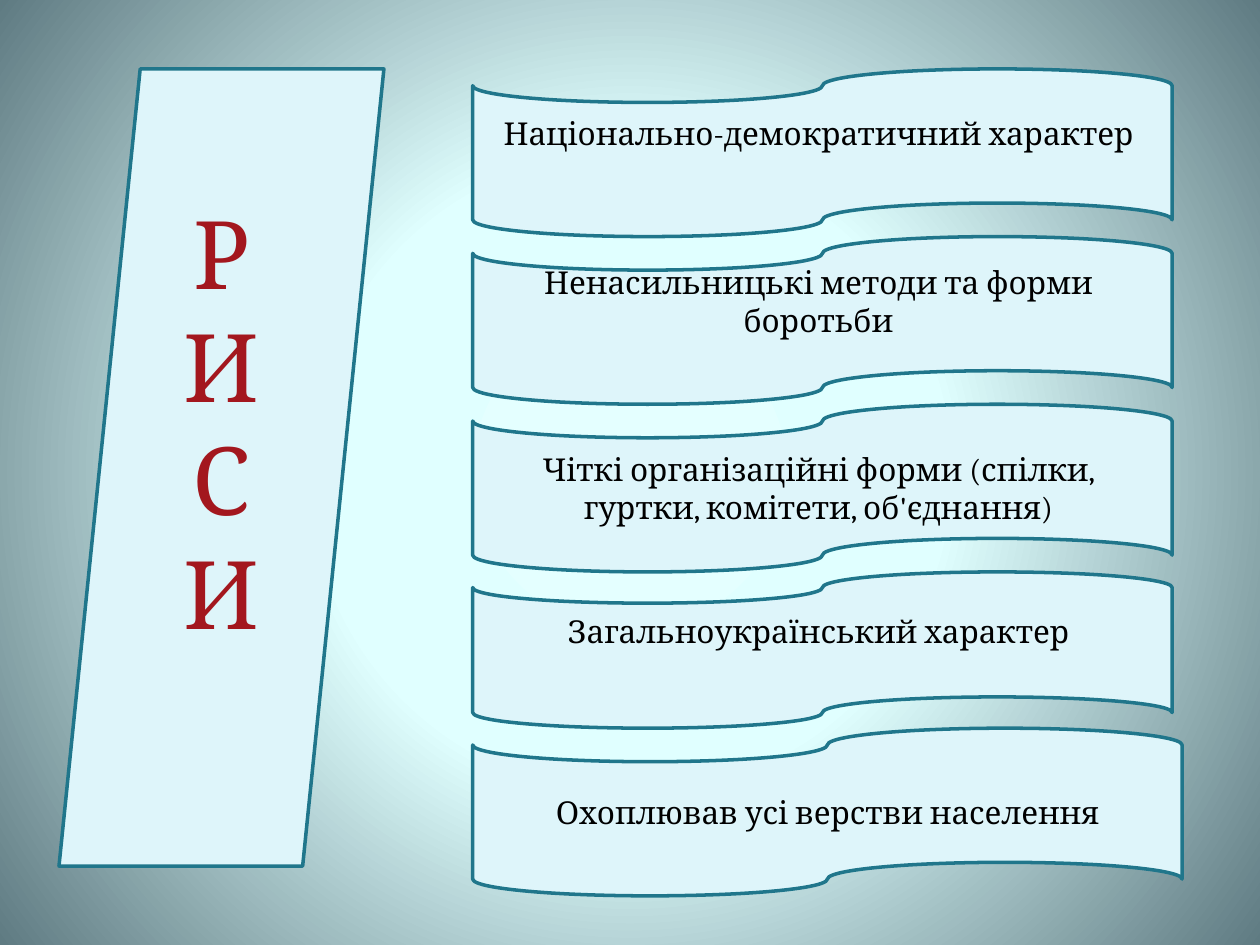
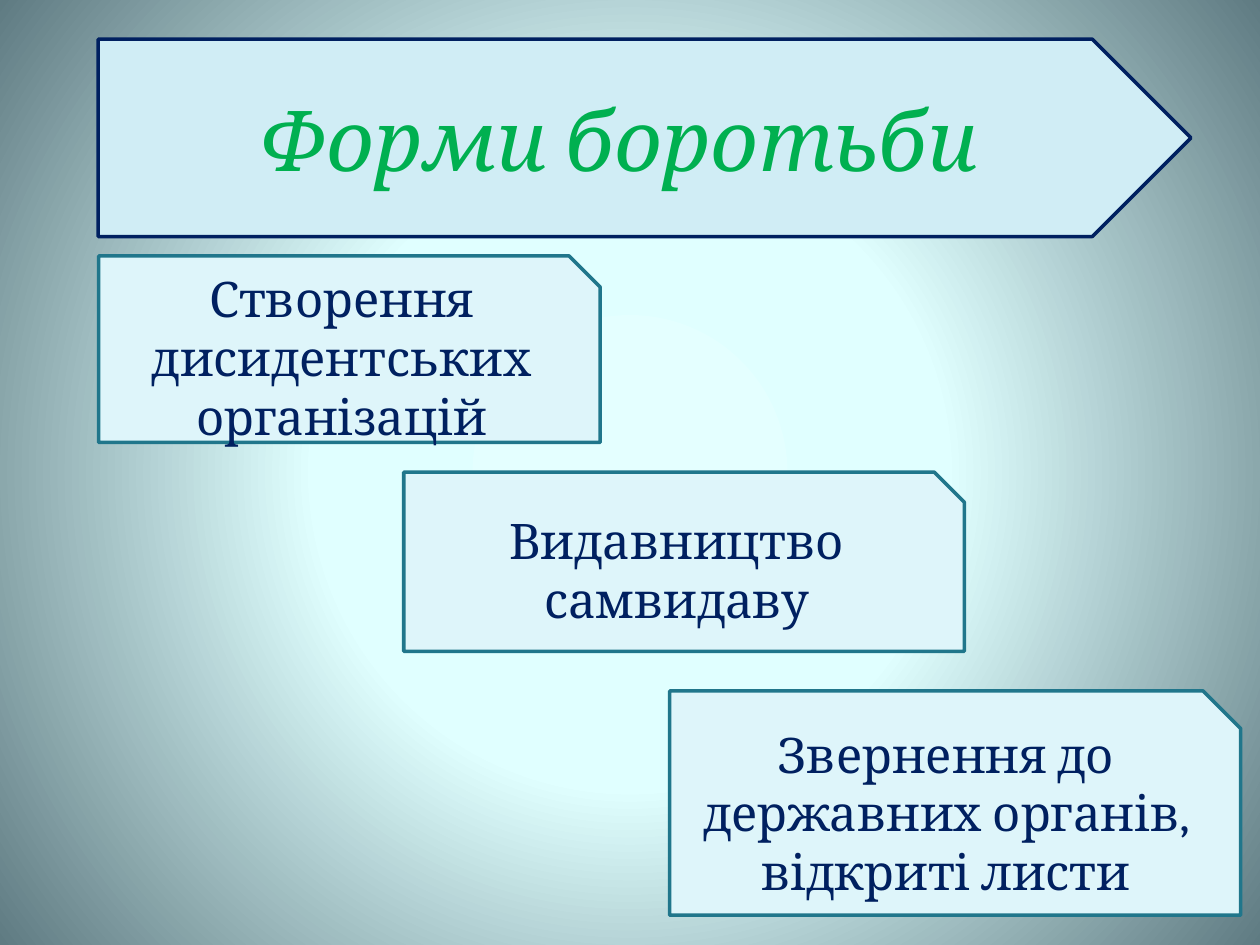
from pptx import Presentation
from pptx import util as u
from pptx.dml.color import RGBColor
from pptx.enum import shapes, text
from pptx.oxml import parse_xml
from pptx.oxml.ns import nsdecls, qn

# Content
FEATURES_TITLE = ["Р", "И", "С", "И"]
# text, width, height, right margin, lift of the text (cm)
FEATURES = [
    ("Національно-демократичний характер", 14.1, 3.38, 0.41, 0.78),
    ("Ненасильницькі методи та форми боротьби", 14.1, 3.38, 0.41, 0.78),
    ("Чіткі організаційні форми (спілки, гуртки, комітети, об'єднання)",
     14.1, 3.38, 0.41, 0),
    ("Загальноукраїнський характер", 14.1, 3.15, 0.41, 0.78),
    ("Охоплював усі верстви населення", 14.3, 3.38, 0.25, 0),
]
FORMS_TITLE = ["Форми боротьби"]
FORMS = [
    ("Створення дисидентських організацій", (1.99, 5.16, 10.11, 3.76)),
    ("Видавництво самвидаву", (8.14, 9.52, 11.3, 3.61)),
    ("Звернення до державних органів, відкриті листи", (13.5, 13.93, 11.51, 4.52)),
]

# Shared look
FONT = "Cambria"
PALE, TEAL, NAVY = "DEF5FA", "20768B", "002060"
BACKGROUND = [(0, "E4FFFF"), (40, "E0FFFF"), (100, "5F7B82")]
KIND = shapes.MSO_SHAPE


def color(hex_code):
    return RGBColor.from_string(hex_code)


def set_background(master):
    """Give every slide a radial gradient."""
    master.background.fill.gradient()
    stops = "".join(
        f'<a:gs pos="{position * 1000}"><a:srgbClr val="{code}"/></a:gs>'
        for position, code in BACKGROUND)
    radial = parse_xml(
        f'<a:gradFill {nsdecls("a")} rotWithShape="1"><a:gsLst>{stops}</a:gsLst>'
        '<a:path path="circle">'
        '<a:fillToRect l="50000" t="50000" r="50000" b="50000"/>'
        '</a:path></a:gradFill>')
    plain = next(master.element.iter(qn("a:gradFill")))
    plain.getparent().replace(plain, radial)


def write(shape, lines, size, hex_code, italic=False, right=0.25, lift=0):
    """Centre lines in a shape; lift adds room below them (cm)."""
    frame = shape.text_frame
    frame.text = "\n".join(lines)
    frame.word_wrap = True
    frame.auto_size = text.MSO_AUTO_SIZE.NONE
    frame.vertical_anchor = text.MSO_ANCHOR.MIDDLE
    frame.margin_right = u.Cm(right)
    frame.margin_bottom = u.Cm(0.13 + lift)
    for para in frame.paragraphs:
        para.alignment = text.PP_ALIGN.CENTER
        for span in para.runs:
            span.font.name = FONT
            span.font.size = u.Pt(size)
            span.font.italic = italic
            span.font.color.rgb = color(hex_code)


def add_panel(page, kind, box, fill=PALE, line=TEAL, adjustment=None):
    panel = page.shapes.add_shape(kind, *map(u.Cm, box))
    panel.shadow.inherit = False
    panel.fill.solid()
    panel.fill.fore_color.rgb = color(fill)
    panel.line.color.rgb = color(line)
    panel.line.width = u.Pt(2)
    if adjustment is not None:
        panel.adjustments[0] = adjustment
    return panel


def place_title(page, panel, box, lines, size, hex_code, **style):
    """Lay the title placeholder over its panel."""
    title = page.shapes.title
    title.left, title.top, title.width, title.height = map(u.Cm, box)
    write(title, lines, size, hex_code, **style)
    panel.element.addnext(title.element)


def build_features(page):
    # Slanted panel with the vertical title
    box = (1.19, 1.39, 6.55, 16.07)
    panel = add_panel(page, KIND.PARALLELOGRAM, box, adjustment=0.25)
    place_title(page, panel, box, FEATURES_TITLE, 54, "A3171E", lift=1.86)

    # Stack of waves, each starting where the last one ends
    top = 1.39
    for wording, width, height, right, lift in FEATURES:
        wave = add_panel(page, KIND.FLOWCHART_PUNCHED_TAPE, (9.53, top, width, height))
        write(wave, [wording], 18, "000000", right=right, lift=lift)
        top += height


def build_forms(page):
    # Arrow with the title, which keeps clear of the tip
    left, top, width, height = box = (1.98, 0.79, 22.03, 3.98)
    arrow = add_panel(page, KIND.PENTAGON, box, "D0EDF5", NAVY, 0.5)
    place_title(page, arrow, (left, top, width - height / 4, height),
                FORMS_TITLE, 48, "00B050", italic=True)

    # Staircase of cards
    for wording, card_box in FORMS:
        card = add_panel(page, KIND.SNIP_1_RECTANGLE, card_box, adjustment=0.167)
        write(card, [wording], 28, NAVY)


def main():
    deck = Presentation()
    deck.slide_width, deck.slide_height = u.Cm(25.4), u.Cm(19.05)
    set_background(deck.slide_master)
    title_only = deck.slide_layouts.get_by_name("Title Only")
    for build in (build_features, build_forms):
        build(deck.slides.add_slide(title_only))
    deck.save("out.pptx")


if __name__ == "__main__":
    main()
